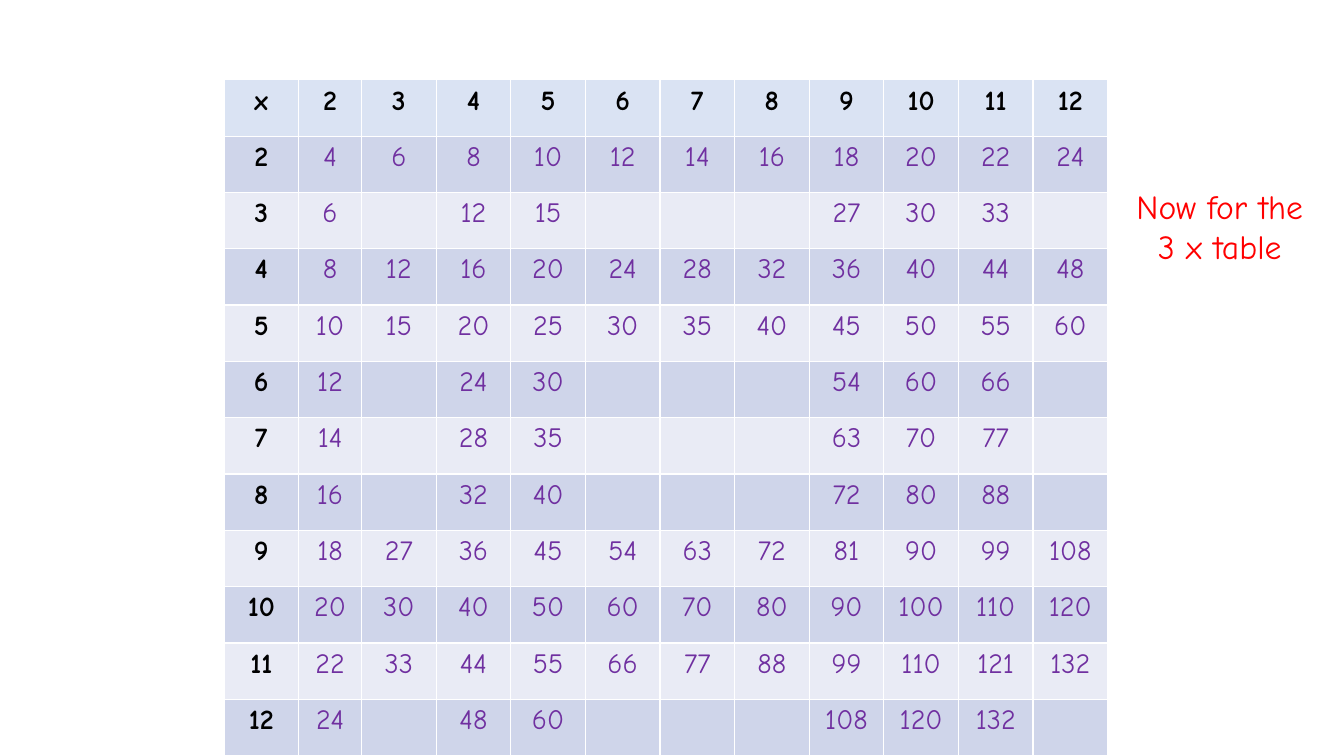
from dataclasses import dataclass

from pptx import Presentation
from pptx.dml.color import RGBColor
from pptx.enum.text import PP_ALIGN
from pptx.util import Pt

FACTORS = range(2, 13)
LEARNED_TABLES = {2, 4, 5, 9, 10, 11}
CORNER_LABEL = "x"
PROMPT = "Now for the 3 x table"


@dataclass(frozen=True)
class Theme:
    font: str = "Comic Neue"
    table_size: int = 20
    prompt_size: int = 24
    factor_color: str = "000000"
    product_color: str = "7030A0"
    prompt_color: str = "FF0000"
    header_fill: str = "DAE3F3"
    band_fills: tuple = ("E9EBF5", "CFD5EA")


THEME = Theme()
SLIDE_WIDTH, SLIDE_HEIGHT = 960, 540
TABLE_LEFT, TABLE_TOP = 160, 57
COLUMN_WIDTH, NARROW_WIDTH, ROW_HEIGHT = 53.3, 45, 40.25
NARROW_COLUMN = 1
PROMPT_BOX = (800, 129, 142.5, 94)


def add_text(text_frame, text, size, color, bold=False):
    paragraph = text_frame.paragraphs[0]
    paragraph.alignment = PP_ALIGN.CENTER
    run = paragraph.add_run()
    run.text = text
    run.font.name = THEME.font
    run.font.size = Pt(size)
    run.font.bold = bold
    run.font.color.rgb = RGBColor.from_string(color)


def table_rows():
    yield [CORNER_LABEL, *FACTORS]
    for first in FACTORS:
        yield [first] + [
            first * second if LEARNED_TABLES & {first, second} else ""
            for second in FACTORS
        ]


def add_multiplication_table(slide):
    rows = list(table_rows())
    count = len(rows)
    widths = [COLUMN_WIDTH] * count
    widths[NARROW_COLUMN] = NARROW_WIDTH
    table = slide.shapes.add_table(
        count, count, Pt(TABLE_LEFT), Pt(TABLE_TOP), Pt(sum(widths)), Pt(ROW_HEIGHT * count)
    ).table
    for column, width in zip(table.columns, widths):
        column.width = Pt(width)
    for row_index, values in enumerate(rows):
        table.rows[row_index].height = Pt(ROW_HEIGHT)
        fill = THEME.band_fills[row_index % 2] if row_index else THEME.header_fill
        for column_index, value in enumerate(values):
            cell = table.cell(row_index, column_index)
            cell.fill.solid()
            cell.fill.fore_color.rgb = RGBColor.from_string(fill)
            is_factor = row_index == 0 or column_index == 0
            color = THEME.factor_color if is_factor else THEME.product_color
            if value:
                add_text(cell.text_frame, str(value), THEME.table_size, color, is_factor)


def add_prompt(slide):
    text_frame = slide.shapes.add_textbox(*map(Pt, PROMPT_BOX)).text_frame
    text_frame.word_wrap = True
    add_text(text_frame, PROMPT, THEME.prompt_size, THEME.prompt_color)


def main():
    presentation = Presentation()
    presentation.slide_width = Pt(SLIDE_WIDTH)
    presentation.slide_height = Pt(SLIDE_HEIGHT)
    slide = presentation.slides.add_slide(presentation.slide_layouts.get_by_name("Blank"))
    add_multiplication_table(slide)
    add_prompt(slide)
    presentation.save("out.pptx")


if __name__ == "__main__":
    main()
